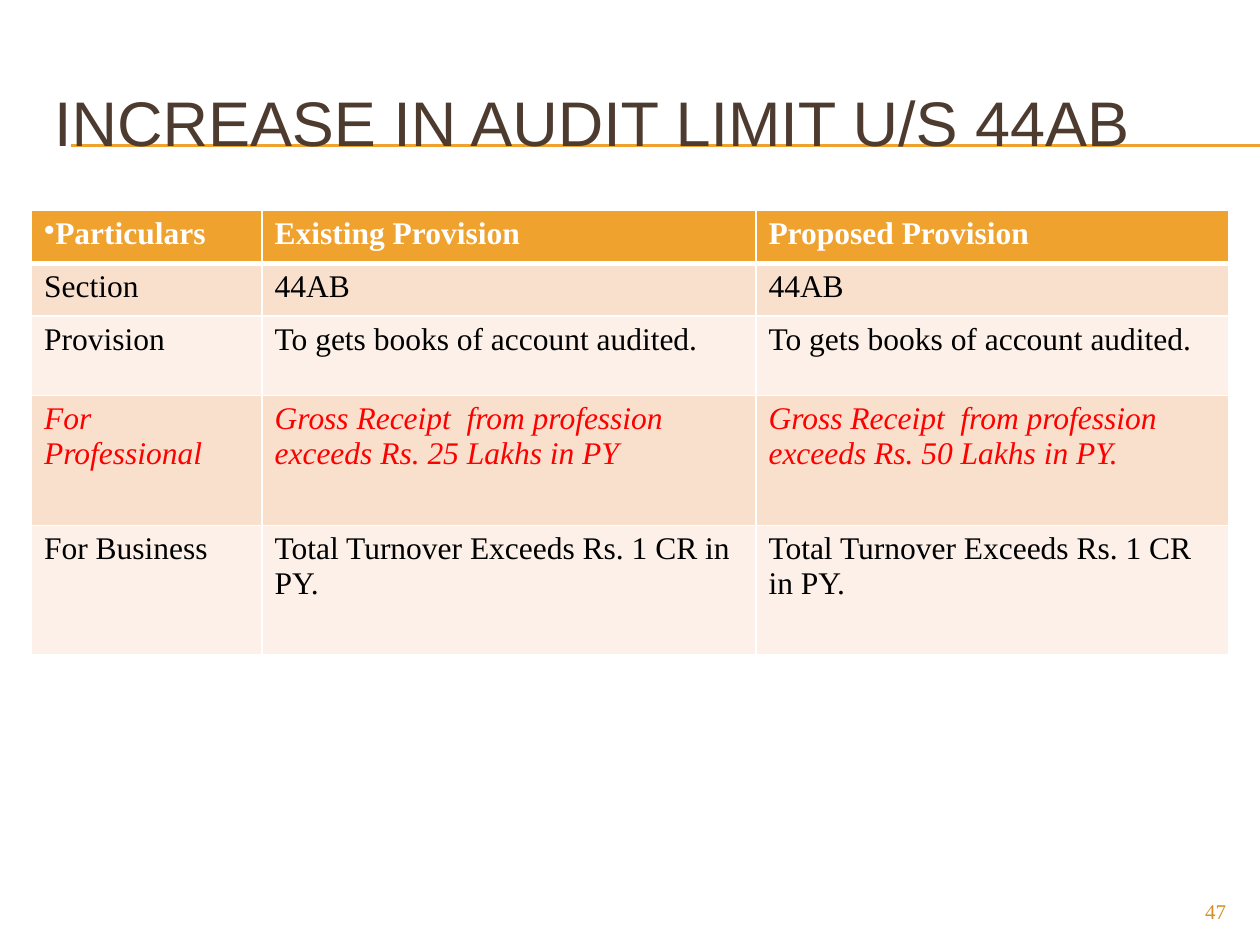
"""Build a slide comparing existing and proposed audit limits under section 44AB."""
import dataclasses

import pptx
import pptx.dml.color
import pptx.enum.shapes
import pptx.enum.text
import pptx.oxml
import pptx.oxml.ns
import pptx.oxml.xmlchemy
import pptx.util
from pptx.util import Inches

COLORS = {
    "accent": "F0A22E",
    "title": "4E3B30",
    "number": "D48F29",
    "band_dark": "F9E0CD",
    "band_light": "FCF0E8",
    "white": "FFFFFF",
    "black": "000000",
    "red": "FF0000",
}
SERIF = "Times New Roman"
COLUMN_WIDTHS = (1.83, 3.92, 3.75)
RULE_HEIGHTS = (1.15, 1.16)


@dataclasses.dataclass(frozen=True)
class TableRow:
    height: float
    texts: tuple[str, str, str]
    fill: str
    color: str = "black"
    bold: bool = False
    italic: bool = False
    bottom_border: float = 1


ROWS = (
    TableRow(0.42, ("Particulars", "Existing Provision", "Proposed Provision"),
             "accent", "white", bold=True, bottom_border=3),
    TableRow(0.42, ("Section", "44AB", "44AB"), "band_dark"),
    TableRow(0.63, ("Provision", "To gets books of account audited.",
                    "To gets books of account audited."), "band_light"),
    TableRow(1.03, ("For Professional",
                    "Gross Receipt  from profession exceeds Rs. 25 Lakhs in PY",
                    "Gross Receipt  from profession exceeds Rs. 50 Lakhs in PY."),
             "band_dark", "red", italic=True),
    TableRow(1.03, ("For Business", "Total Turnover Exceeds Rs. 1 CR in PY.",
                    "Total Turnover Exceeds Rs. 1 CR in PY."), "band_light"),
)


def rgb(name: str) -> pptx.dml.color.RGBColor:
    """Return the named palette color."""
    return pptx.dml.color.RGBColor.from_string(COLORS[name])


def write_text(text_frame, text: str, color: str, formats: dict) -> None:
    """Write one formatted run into a text frame."""
    run = text_frame.paragraphs[0].add_run()
    run.text = text
    run.font.color.rgb = rgb(color)
    for attribute, value in formats.items():
        setattr(run.font, attribute, value)


def place(shape, left: float, top: float, width: float, height: float) -> None:
    """Position and size a shape in inches."""
    bounds = {"left": left, "top": top, "width": width, "height": height}
    for attribute, value in bounds.items():
        setattr(shape, attribute, Inches(value))


def add_rule(slide, top: float, depth: int) -> None:
    """Draw a horizontal rule behind the title."""
    rule = slide.shapes.add_connector(
        pptx.enum.shapes.MSO_CONNECTOR.STRAIGHT,
        Inches(0.56), Inches(top), Inches(10), Inches(top))
    rule.line.color.rgb = rgb("accent")
    rule.line.width = pptx.util.Pt(0.75)
    rule._element.spPr.append(pptx.oxml.xmlchemy.OxmlElement("a:effectLst"))
    slide.shapes._spTree.insert(2 + depth, rule._element)


def add_borders(cell, bottom: float) -> None:
    """Give a cell white borders on all four sides."""
    properties = cell._tc.get_or_add_tcPr()
    widths = {"lnL": 1, "lnR": 1, "lnT": 1, "lnB": bottom}
    for position, (side, width) in enumerate(widths.items()):
        border = pptx.oxml.parse_xml(
            f'<a:{side} {pptx.oxml.ns.nsdecls("a")} w="{int(pptx.util.Pt(width))}">'
            f'<a:solidFill><a:srgbClr val="{COLORS["white"]}"/></a:solidFill>'
            f'</a:{side}>')
        properties.insert(position, border)


def add_bullet(paragraph) -> None:
    """Put a bullet directly before the paragraph text."""
    properties = paragraph._p.get_or_add_pPr()
    for attribute in ("marL", "indent"):
        properties.set(attribute, "0")
    bullet = pptx.oxml.xmlchemy.OxmlElement("a:buChar")
    bullet.set("char", "•")
    properties.append(bullet)


def add_provision_table(slide) -> None:
    """Add the table of existing and proposed provisions."""
    table = slide.shapes.add_table(
        len(ROWS), len(COLUMN_WIDTHS), Inches(0.25), Inches(1.67),
        Inches(sum(COLUMN_WIDTHS)), Inches(sum(row.height for row in ROWS))).table
    for column, width in zip(table.columns, COLUMN_WIDTHS):
        column.width = Inches(width)
    for table_row, row in zip(table.rows, ROWS):
        table_row.height = Inches(row.height)
        formats = {"name": SERIF, "size": pptx.util.Pt(18),
                   "bold": row.bold, "italic": row.italic}
        for cell, text in zip(table_row.cells, row.texts):
            cell.fill.solid()
            cell.fill.fore_color.rgb = rgb(row.fill)
            add_borders(cell, row.bottom_border)
            write_text(cell.text_frame, text, row.color, formats)
    add_bullet(table.cell(0, 0).text_frame.paragraphs[0])


def add_title(slide) -> None:
    """Fill the title placeholder."""
    title = slide.shapes.title
    place(title, 0.33, 0.5, 9.5, 0.92)
    title.text_frame.vertical_anchor = pptx.enum.text.MSO_ANCHOR.MIDDLE
    title.text_frame.paragraphs[0].alignment = pptx.enum.text.PP_ALIGN.LEFT
    write_text(title.text_frame, "INCREASE IN AUDIT LIMIT U/S 44AB", "title",
               {"name": "Arial", "size": pptx.util.Pt(36)})


def add_page_number(slide) -> None:
    """Add the page number at the lower right."""
    box = slide.shapes.add_textbox(
        Inches(9), Inches(7.08), Inches(0.83), Inches(0.27))
    box.text_frame.word_wrap = True
    box.text_frame.paragraphs[0].alignment = pptx.enum.text.PP_ALIGN.RIGHT
    write_text(box.text_frame, "47", "number",
               {"name": SERIF, "size": pptx.util.Pt(12)})


def main() -> None:
    """Build and save the presentation."""
    presentation = pptx.Presentation()
    presentation.slide_width = Inches(10)
    presentation.slide_height = Inches(7.5)
    slide = presentation.slides.add_slide(presentation.slide_layouts[5])
    for depth, top in enumerate(RULE_HEIGHTS):
        add_rule(slide, top, depth)
    add_title(slide)
    add_provision_table(slide)
    add_page_number(slide)
    presentation.save("out.pptx")


if __name__ == "__main__":
    main()
